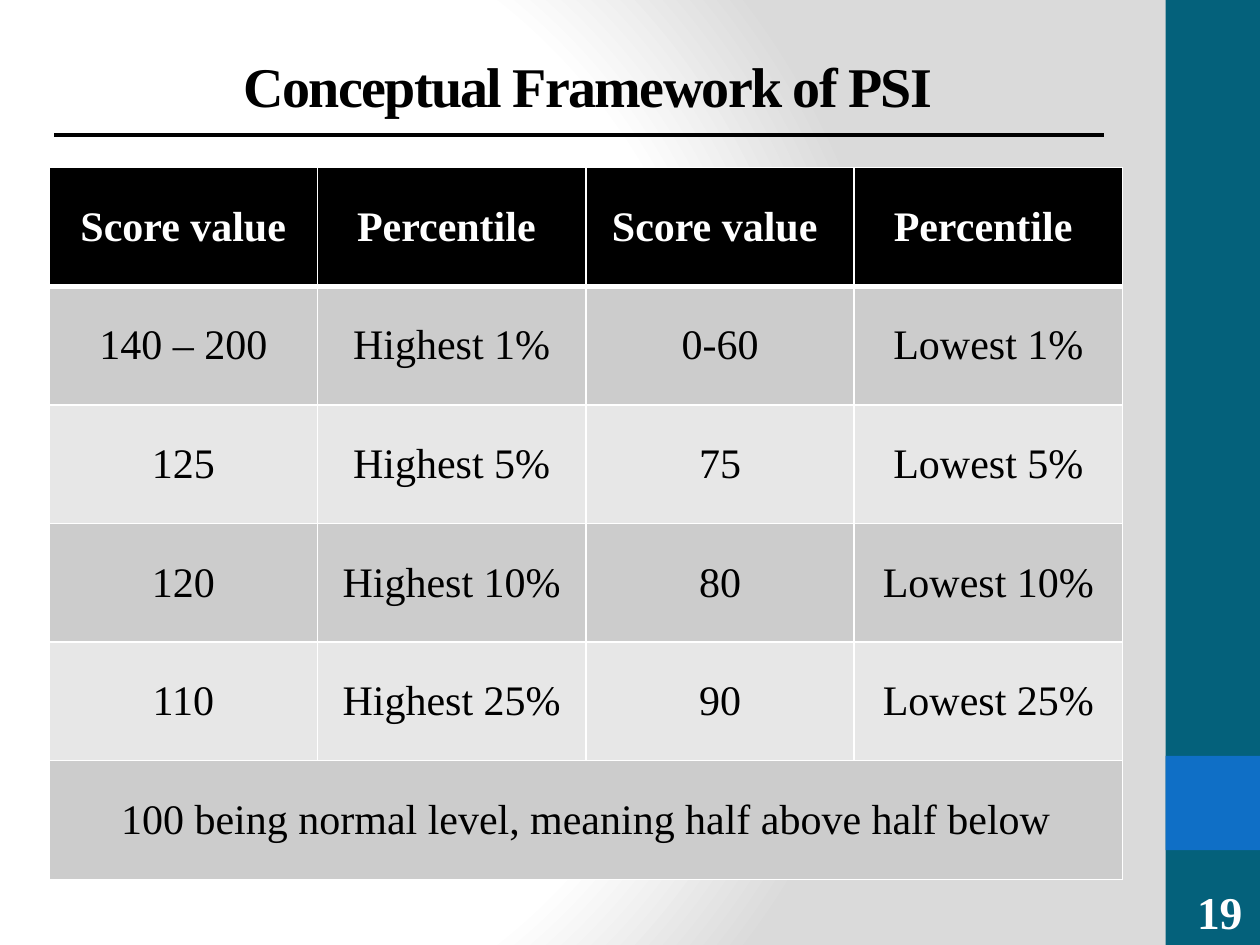
import pptx
import pptx.chart
import pptx.dml.color
import pptx.enum.shapes
import pptx.enum.text
import pptx.oxml
import pptx.oxml.ns
import pptx.util
from dataclasses import dataclass

Cm = pptx.util.Cm
Pt = pptx.util.Pt
Rgb = pptx.dml.color.RGBColor.from_string
Align = pptx.enum.text.PP_ALIGN
Anchor = pptx.enum.text.MSO_ANCHOR
Kind = pptx.enum.shapes.MSO_SHAPE


@dataclass(frozen=True)
class Theme:
    font: str = "Times New Roman"
    black: str = "000000"
    white: str = "FFFFFF"
    shade: str = "DADADA"
    teal: str = "04617B"
    blue: str = "0F6FC6"
    bands: tuple = ("CCCCCC", "E7E7E7")
    title: int = 32
    number: int = 26
    body: int = 24
    rule: float = 2.25


THEME = Theme()
HEAD = ["Score value", "Percentile ", "Score value ", "Percentile "]
ROWS = [
    ["140 – 200", "Highest 1%", "0-60", "Lowest 1%"],
    ["125", "Highest 5%", "75", "Lowest 5%"],
    ["120", "Highest 10%", "80", "Lowest 10%"],
    ["110", "Highest 25%", "90", "Lowest 25%"],
]
NOTE = "100 being normal level, meaning half above half below"


def xml(text):
    return pptx.oxml.parse_xml(text.replace(">", f" {pptx.oxml.ns.nsdecls('a')}>", 1))


def write(frame, text, size, color, bold=True):
    frame.text = text
    para = frame.paragraphs[0]
    para.alignment = Align.CENTER
    font = para.runs[0].font
    font.name, font.size, font.bold = THEME.font, Pt(size), bold
    font.color.rgb = Rgb(color)
    return para.runs[0]


def label(slide, box, text, size, color, anchor):
    frame = slide.shapes.add_textbox(*map(Cm, box)).text_frame
    frame.word_wrap = True
    frame.vertical_anchor = anchor
    return frame, write(frame, text, size, color)


def block(slide, box, color):
    shape = slide.shapes.add_shape(Kind.RECTANGLE, *map(Cm, box))
    shape.shadow.inherit = False
    shape.fill.solid()
    shape.fill.fore_color.rgb = Rgb(color)
    shape.line.fill.background()


def backdrop(slide):
    fill = slide.background.fill
    fill.gradient()
    stops = [(0, THEME.white), (75, THEME.white), (100, THEME.shade)]
    marks = "".join(
        f'<a:gs pos="{pos * 1000}"><a:srgbClr val="{color}"/></a:gs>'
        for pos, color in stops
    )
    grad = xml(
        f'<a:gradFill rotWithShape="1"><a:gsLst>{marks}</a:gsLst><a:path path="circle">'
        '<a:fillToRect l="20000" t="50000" r="100000" b="50000"/></a:path></a:gradFill>'
    )
    holder = slide.background._cSld.bg.bgPr
    old = holder.find(pptx.oxml.ns.qn("a:gradFill"))
    holder.replace(old, grad)


def sidebar(slide, box):
    x, y, w, h = box
    block(slide, box, THEME.teal)
    block(slide, (x, y + h * 0.8, w, w), THEME.blue)
    label(slide, (x + 0.28, y + h - 1.35, w - 0.28, 1.35), "19",
          THEME.number, THEME.white, Anchor.BOTTOM)


def header(slide, box):
    x, y, w, h = box
    frame, run = label(slide, (x + 0.18, y, w, 1.42), "Conceptual Framework of PSI",
                       THEME.title, THEME.black, Anchor.TOP)
    frame.margin_top = Cm(0.28)
    run._r.get_or_add_rPr().set("spc", "-100")
    rule = slide.shapes.add_connector(
        pptx.enum.shapes.MSO_CONNECTOR.STRAIGHT,
        Cm(x), Cm(y + h), Cm(x + w), Cm(y + h))
    rule.line.color.rgb = Rgb(THEME.black)
    rule.line.width = Pt(THEME.rule)
    rule._element.spPr.append(xml("<a:effectLst></a:effectLst>"))


def paint(cell, text, fill, color, bold, edges):
    write(cell.text_frame, text, THEME.body, color, bold)
    cell.vertical_anchor = Anchor.MIDDLE
    props = cell._tc.get_or_add_tcPr()
    for side, width in edges.items():
        props.append(xml(
            f'<a:ln{side} w="{Pt(width)}"><a:solidFill>'
            f'<a:srgbClr val="{THEME.white}"/></a:solidFill></a:ln{side}>'))
    cell.fill.solid()
    cell.fill.fore_color.rgb = Rgb(fill)


def scores(slide, box):
    x, y, w, h = box
    lines = [HEAD, *ROWS, [NOTE]]
    table = slide.shapes.add_table(len(lines), len(HEAD), *map(Cm, box)).table
    for col in table.columns:
        col.width = Cm(w / len(HEAD))
    for row in table.rows:
        row.height = Cm(h / len(lines))
    last = len(lines) - 1
    table.cell(last, 0).merge(table.cell(last, len(HEAD) - 1))
    for r, line in enumerate(lines):
        top = r == 0
        fill = THEME.black if top else THEME.bands[(r - 1) % 2]
        color = THEME.white if top else THEME.black
        edges = {"L": 1, "R": 1, "T": 3 if r == 1 else 1, "B": 3 if top else 1}
        for c, text in enumerate(line):
            paint(table.cell(r, c), text, fill, color, top, edges)


def main():
    deck = pptx.Presentation()
    deck.slide_width, deck.slide_height = Cm(25.4), Cm(19.05)
    slide = deck.slides.add_slide(deck.slide_layouts[6])
    backdrop(slide)
    sidebar(slide, (23.5, 0, 1.9, 19.05))
    header(slide, (1.09, 0.76, 21.17, 1.96))
    scores(slide, (0.99, 3.38, 21.64, 14.35))
    deck.save("out.pptx")


if __name__ == "__main__":
    main()
